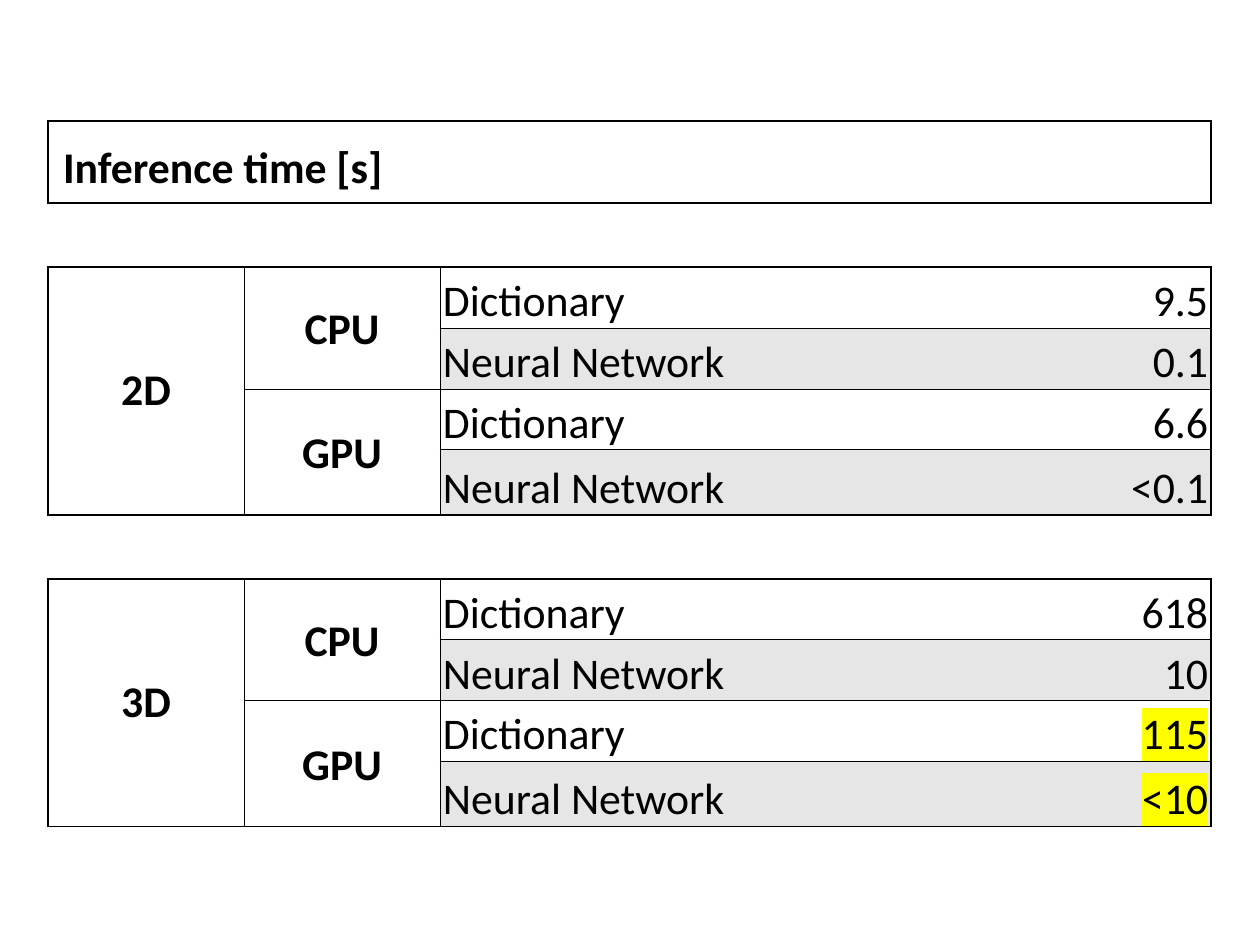
from lxml.etree import SubElement
from pptx import Presentation
from pptx.dml.color import RGBColor
from pptx.enum.text import MSO_ANCHOR, PP_ALIGN
from pptx.oxml.ns import qn
from pptx.util import Emu, Pt

PX = 914400 / 126
BLACK = RGBColor(0x00, 0x00, 0x00)
GRAY = RGBColor(0xE7, 0xE6, 0xE6)
YELLOW = RGBColor(0xFF, 0xFF, 0x00)
FONT = "Calibri"
FONT_SIZE = 25
THIN, THICK = 0.5, 1
WIDE_INSETS = (15, 8, 15, 8)
TIGHT_INSETS = (3, 3, 3, 0)
COLUMN_WIDTHS = (196, 196, 196, 334, 437, 196)
BLOCK_HEIGHTS = (61, 61, 61, 65)
ROW_HEIGHTS = (64, 82, 64, *BLOCK_HEIGHTS, 64, *BLOCK_HEIGHTS, 61)
METHODS = ("Dictionary", "Neural Network")
DEVICES = ("CPU", "GPU")
BLOCKS = (
    (3, "2D", ("9.5", "0.1", "6.6", "<0.1")),
    (8, "3D", ("618", "10", "115", "<10")),
)
HIGHLIGHTED = ("115", "<10")


def length(px):
    return Emu(round(px * PX))


class TimingSlide:
    def __init__(self, presentation):
        self.slide = presentation.slides.add_slide(presentation.slide_layouts[6])
        self.anchors = {}

    def add_table(self, left, top, widths, heights):
        frame = self.slide.shapes.add_table(
            len(heights), len(widths), length(left), length(top),
            length(sum(widths)), length(sum(heights)))
        self.table = frame.table
        self.table.first_row = False
        self.table.horz_banding = False
        for column, width in zip(self.table.columns, widths):
            column.width = length(width)
        for row, height in zip(self.table.rows, heights):
            row.height = length(height)
        for cell in self.table.iter_cells():
            properties = cell._tc.get_or_add_tcPr()
            for side in "LRTB":
                SubElement(SubElement(properties, qn(f"a:ln{side}")), qn("a:noFill"))
            cell.fill.background()

    def merge(self, row, column, rows, columns):
        last = self.table.cell(row + rows - 1, column + columns - 1)
        self.table.cell(row, column).merge(last)
        for r in range(row, row + rows):
            for c in range(column, column + columns):
                self.anchors[r, c] = (row, column)

    def edge(self, row, column, side, points):
        for position in {(row, column), self.anchors.get((row, column), (row, column))}:
            line = self.table.cell(*position)._tc.tcPr.find(qn(f"a:ln{side}"))
            line.clear()
            line.set("w", str(Pt(points)))
            fill = SubElement(line, qn("a:solidFill"))
            SubElement(fill, qn("a:srgbClr")).set("val", str(BLACK))

    def outline(self, row, column, rows, columns, points):
        for c in range(column, column + columns):
            self.edge(row, c, "T", points)
            self.edge(row - 1, c, "B", points)
            self.edge(row + rows - 1, c, "B", points)
            self.edge(row + rows, c, "T", points)
        for r in range(row, row + rows):
            self.edge(r, column, "L", points)
            self.edge(r, column - 1, "R", points)
            self.edge(r, column + columns - 1, "R", points)
            self.edge(r, column + columns, "L", points)

    def add_text(self, row, column, text, alignment=PP_ALIGN.LEFT, bold=False,
                 anchor=MSO_ANCHOR.BOTTOM, insets=TIGHT_INSETS, fill=None):
        cell = self.table.cell(row, column)
        cell.vertical_anchor = anchor
        (cell.margin_left, cell.margin_top,
         cell.margin_right, cell.margin_bottom) = map(length, insets)
        if fill is not None:
            cell.fill.solid()
            cell.fill.fore_color.rgb = fill
        paragraph = cell.text_frame.paragraphs[0]
        paragraph.alignment = alignment
        run = paragraph.add_run()
        run.text = text
        paragraph.font.name = FONT
        paragraph.font.size = Pt(FONT_SIZE)
        paragraph.font.bold = bold
        paragraph.font.color.rgb = BLACK
        return run

    def highlight(self, run):
        mark = SubElement(run._r.get_or_add_rPr(), qn("a:highlight"))
        SubElement(mark, qn("a:srgbClr")).set("val", str(YELLOW))

    def add_label(self, row, column, rows, text, insets):
        self.merge(row, column, rows, 1)
        self.add_text(row, column, text, PP_ALIGN.CENTER, True, MSO_ANCHOR.MIDDLE, insets)
        self.outline(row, column, rows, 1, THIN)

    def add_title(self, row, text):
        self.merge(row, 1, 1, 2)
        self.add_text(row, 1, text, bold=True, insets=WIDE_INSETS)
        self.outline(row, 1, 1, 4, THICK)

    def add_block(self, top, dimension, times):
        self.add_label(top, 1, len(times), dimension, WIDE_INSETS)
        for index, device in enumerate(DEVICES):
            self.add_label(top + 2 * index, 2, 2, device, TIGHT_INSETS)
        for index, time in enumerate(times):
            row = top + index
            fill = GRAY if index % 2 else None
            self.add_text(row, 3, METHODS[index % 2], fill=fill)
            run = self.add_text(row, 4, time, PP_ALIGN.RIGHT, fill=fill)
            if time in HIGHLIGHTED:
                self.highlight(run)
            self.outline(row, 3, 1, 2, THIN)
        self.outline(top, 1, len(times), 4, THICK)


def main():
    presentation = Presentation()
    presentation.slide_width = length(1260)
    presentation.slide_height = length(945)
    timing = TimingSlide(presentation)
    timing.add_table(-148, 57, COLUMN_WIDTHS, ROW_HEIGHTS)
    timing.add_title(1, "Inference time [s]")
    for block in BLOCKS:
        timing.add_block(*block)
    presentation.save("out.pptx")


if __name__ == "__main__":
    main()
